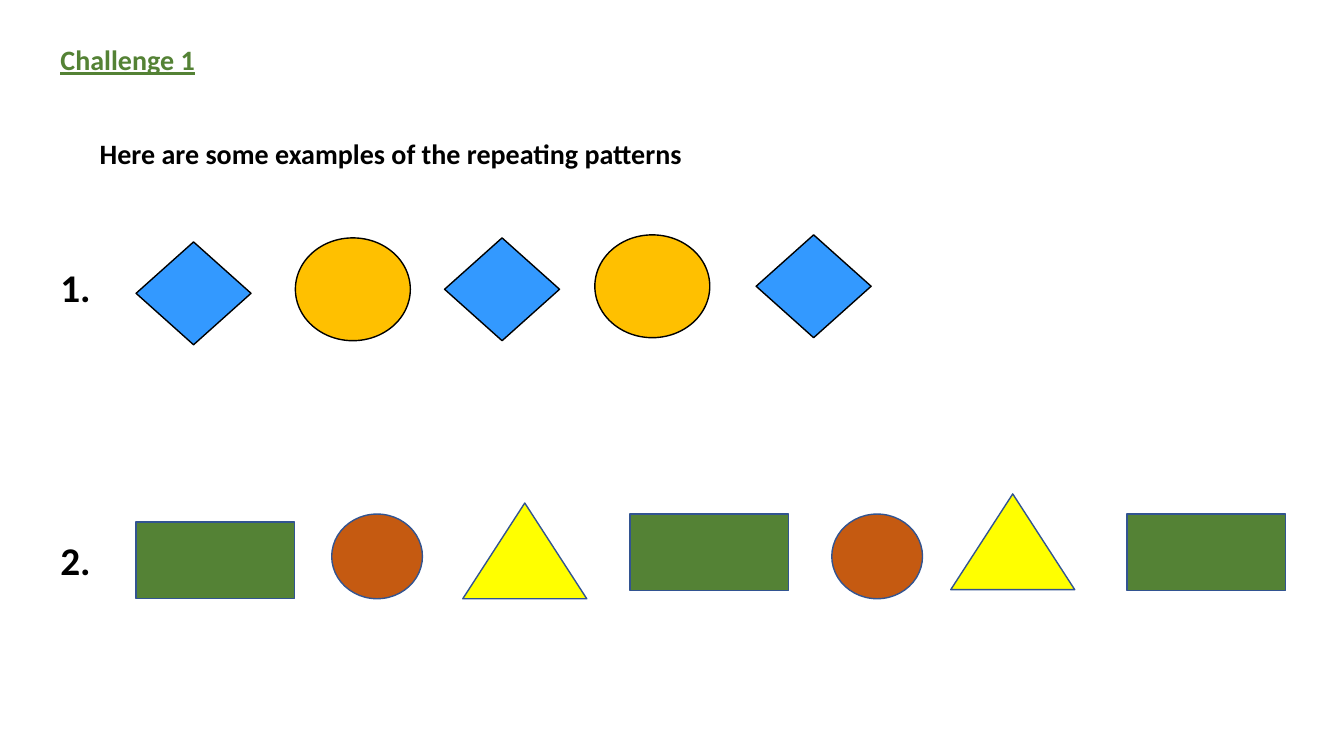
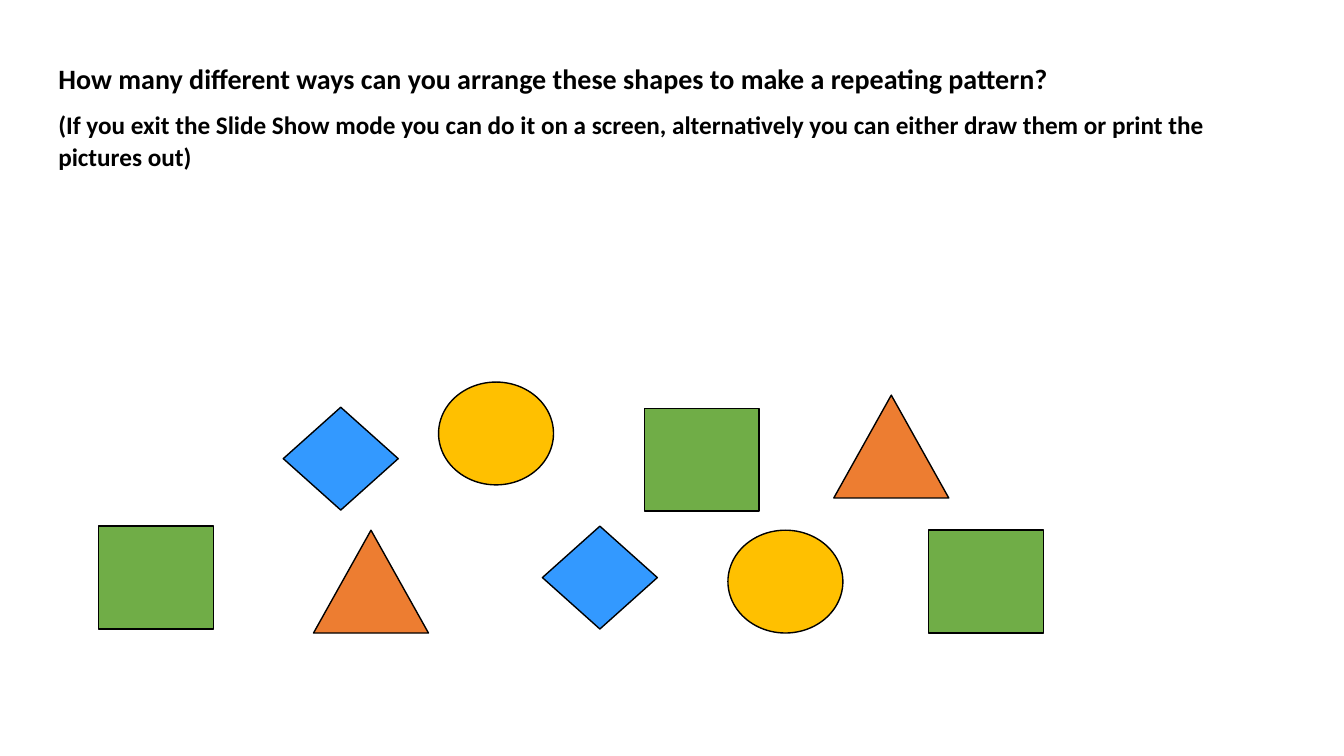
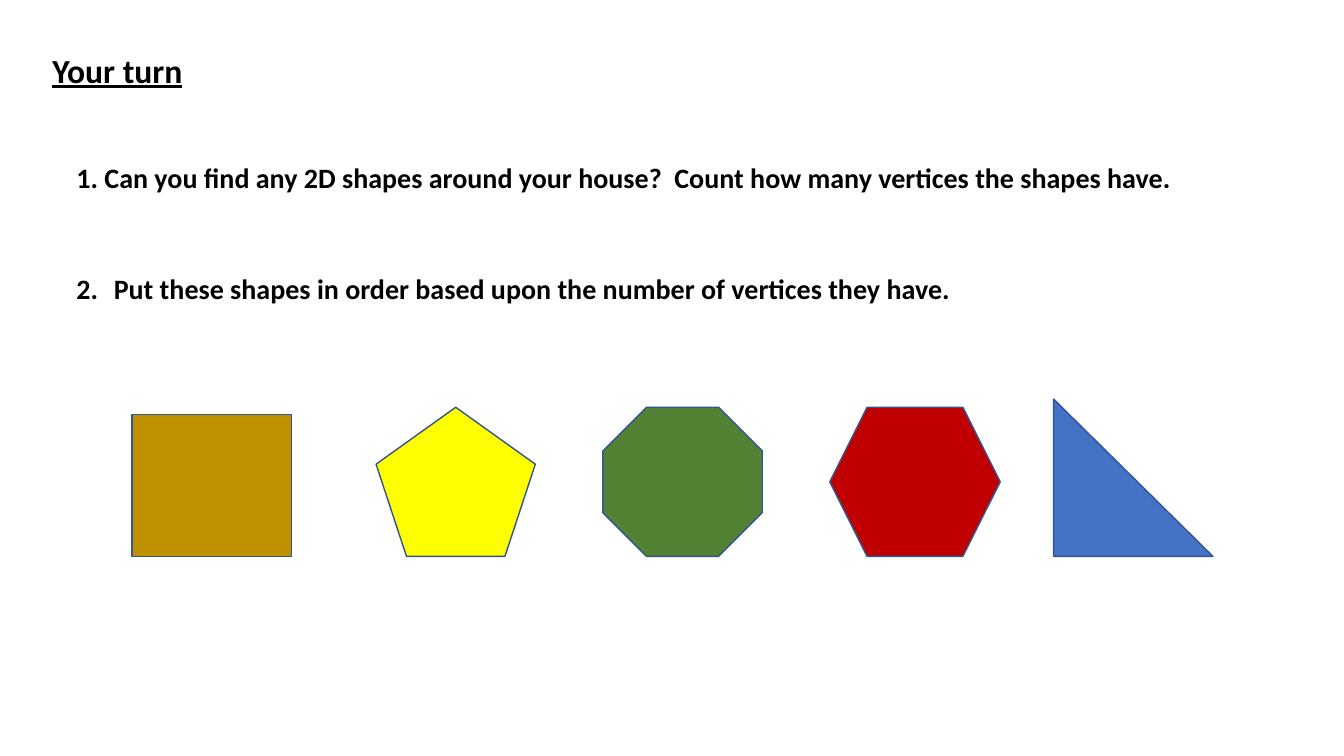
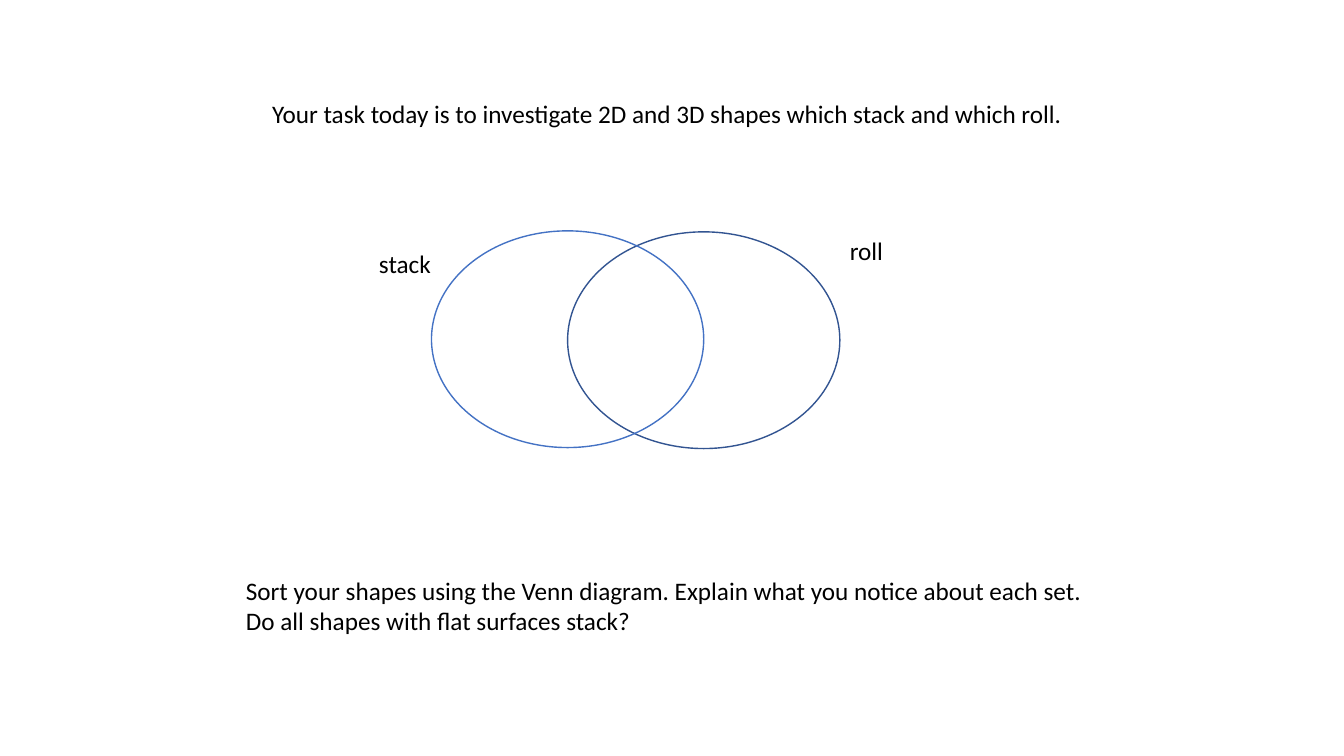
from collections import namedtuple

from pptx import Presentation
from pptx.dml.color import RGBColor
from pptx.enum.shapes import MSO_SHAPE
from pptx.enum.text import MSO_ANCHOR, MSO_AUTO_SIZE, PP_ALIGN
from pptx.util import Inches, Pt

LEFT = PP_ALIGN.LEFT
TOP = MSO_ANCHOR.TOP
GROW = MSO_AUTO_SIZE.SHAPE_TO_FIT_TEXT
RECTANGLE = MSO_SHAPE.RECTANGLE
ELLIPSE = MSO_SHAPE.OVAL
DIAMOND = MSO_SHAPE.DIAMOND
TRIANGLE = MSO_SHAPE.ISOSCELES_TRIANGLE

FONT = "Calibri"
TITLE_ONLY = 5
COLORS = {
    "black": "000000", "white": "FFFFFF", "navy": "325491", "blue": "4472C4",
    "sky": "3399FF", "amber": "FFC000", "leaf": "70AD47", "orange": "ED7D31",
    "forest": "548235", "rust": "C55A11", "yellow": "FFFF00",
    "ochre": "BF9000", "red": "C00000",
}

# Pattern pieces, each defined once
Piece = namedtuple("Piece", "kind fill line width height")
PIECES = {
    "diamond": Piece(DIAMOND, "sky", "black", 1.14, 1.02),
    "circle": Piece(ELLIPSE, "amber", "black", 1.14, 1.02),
    "square": Piece(RECTANGLE, "leaf", "black", 1.14, 1.02),
    "triangle": Piece(TRIANGLE, "orange", "black", 1.14, 1.02),
    "bar": Piece(RECTANGLE, "forest", "navy", 1.57, 0.76),
    "disc": Piece(ELLIPSE, "rust", "navy", 0.9, 0.84),
    "peak": Piece(TRIANGLE, "yellow", "navy", 1.23, 0.95),
    "ochre square": Piece(RECTANGLE, "ochre", "navy", 1.58, 1.41),
    "pentagon": Piece(MSO_SHAPE.REGULAR_PENTAGON, "yellow", "navy", 1.58, 1.48),
    "octagon": Piece(MSO_SHAPE.OCTAGON, "forest", "navy", 1.58, 1.48),
    "hexagon": Piece(MSO_SHAPE.HEXAGON, "red", "navy", 1.69, 1.48),
    "right triangle": Piece(MSO_SHAPE.RIGHT_TRIANGLE, "blue", "navy", 1.58, 1.56),
    "stack set": Piece(ELLIPSE, None, "blue", 2.7, 2.15),
    "roll set": Piece(ELLIPSE, "white", "navy", 2.7, 2.15),
}


def color(name):
    return RGBColor.from_string(COLORS[name])


def format_text(shape, lines, size, bold=True, underline=False,
                color_name="black", wrap=False, spacing=1.0):
    """Fill a text box or title with left-aligned lines."""
    frame = shape.text_frame
    frame.text = "\n".join(lines)
    frame.word_wrap = wrap
    frame.auto_size = GROW
    frame.vertical_anchor = TOP
    for paragraph in frame.paragraphs:
        paragraph.alignment = LEFT
        paragraph.line_spacing = spacing
        font = paragraph.font
        font.name, font.size = FONT, Pt(size)
        font.bold, font.underline = bold, underline
        font.color.rgb = color(color_name)


def add_text(slide, box, *lines, **style):
    textbox = slide.shapes.add_textbox(*map(Inches, box))
    format_text(textbox, lines, **style)


def add_titled_slide(presentation, box, text, **style):
    slide = presentation.slides.add_slide(presentation.slide_layouts[TITLE_ONLY])
    title = slide.shapes.title
    title.left, title.top, title.width, title.height = map(Inches, box)
    format_text(title, [text], **style)
    return slide


def add_pieces(slide, left, top, placements):
    """Place named pieces at offsets from the region's top left corner."""
    for name, across, down in placements:
        piece = PIECES[name]
        shape = slide.shapes.add_shape(
            piece.kind, Inches(left + across), Inches(top + down),
            Inches(piece.width), Inches(piece.height))
        shape.shadow.inherit = False
        if piece.fill:
            shape.fill.solid()
            shape.fill.fore_color.rgb = color(piece.fill)
        else:
            shape.fill.background()
        shape.line.color.rgb = color(piece.line)
        shape.line.width = Pt(1)


def add_numbered_row(slide, left, top, number, number_down, placements):
    """A pattern row: its number, then its pieces."""
    add_text(slide, (left, top + number_down, 0.51, 0.57), number, size=28)
    add_pieces(slide, left + 0.85, top, placements)


def build_examples(presentation):
    slide = add_titled_slide(presentation, (0.5, 0.37, 1.55, 0.44), "Challenge 1",
                             size=20, underline=True, color_name="forest")
    add_text(slide, (0.89, 1.31, 6.04, 0.44),
             "Here are some examples of the repeating patterns", size=20)
    add_numbered_row(slide, 0.5, 2.33, "1.", 0.23, [
        ("diamond", 0, 0.07), ("circle", 1.58, 0.03), ("diamond", 3.06, 0.03),
        ("circle", 4.55, 0), ("diamond", 6.15, 0)])
    add_numbered_row(slide, 0.5, 4.9, "2.", 0.37, [
        ("bar", 0, 0.28), ("disc", 1.94, 0.2), ("peak", 3.24, 0.09),
        ("bar", 4.9, 0.2), ("disc", 6.9, 0.2), ("peak", 8.08, 0),
        ("bar", 9.83, 0.2)])


def build_arranging(presentation):
    slide = add_titled_slide(
        presentation, (0.48, 0.54, 12.37, 0.46),
        "How many different ways can you arrange these shapes to make a repeating pattern?",
        size=20, wrap=True, spacing=1.07)
    add_text(
        slide, (0.48, 1.01, 12.37, 0.75),
        "(If you exit the Slide Show mode you can do it on a screen, alternatively "
        "you can either draw them or print the pictures out)",
        size=18, wrap=True, spacing=1.07)
    add_pieces(slide, 0.98, 3.79, [
        # Upper row
        ("diamond", 1.83, 0.25), ("circle", 3.37, 0),
        ("square", 5.41, 0.26), ("triangle", 7.29, 0.13),
        # Lower row
        ("square", 0, 1.43), ("triangle", 2.13, 1.47), ("diamond", 4.4, 1.43),
        ("circle", 6.24, 1.47), ("square", 8.23, 1.47)])


def build_vertices(presentation):
    slide = add_titled_slide(presentation, (0.42, 0.44, 1.5, 0.5), "Your turn",
                             size=24, underline=True)
    # Questions
    add_text(slide, (0.66, 1.54, 11.22, 0.44),
             "1. Can you find any 2D shapes around your house?  "
             "Count how many vertices the shapes have.", size=20)
    add_text(slide, (0.66, 2.64, 0.48, 0.44), "2.", size=20)
    add_text(slide, (1.03, 2.64, 8.58, 0.44),
             "Put these shapes in order based upon the number of vertices they have.",
             size=20)
    # Shapes to sort, standing on one base line
    row_height = 1.56
    columns = {"ochre square": 0, "pentagon": 2.42, "octagon": 4.67,
               "hexagon": 6.92, "right triangle": 9.14}
    add_pieces(slide, 1.31, 3.96, [
        (name, across, row_height - PIECES[name].height)
        for name, across in columns.items()])


def add_venn_diagram(slide, left, top):
    add_pieces(slide, left, top, [("roll set", 1.97, 0.01), ("stack set", 0.62, 0)])
    add_text(slide, (left, top + 0.12, 0.72, 0.4), "stack", size=18, bold=False)
    add_text(slide, (left + 4.67, top, 0.53, 0.4), "roll", size=18, bold=False)


def build_sorting(presentation):
    slide = add_titled_slide(
        presentation, (2.6, 0.93, 8.13, 0.4),
        "Your task today is to investigate 2D and 3D shapes which stack and which roll.",
        size=18, bold=False)
    add_venn_diagram(slide, 3.66, 2.29)
    add_text(slide, (2.34, 5.66, 8.65, 0.71),
             "Sort your shapes using the Venn diagram. Explain what you notice about each set.",
             "Do all shapes with flat surfaces stack?", size=18, bold=False)


def main():
    presentation = Presentation()
    presentation.slide_width = Inches(13.33)
    presentation.slide_height = Inches(7.5)
    for build in (build_examples, build_arranging, build_vertices, build_sorting):
        build(presentation)
    presentation.save("out.pptx")


if __name__ == "__main__":
    main()
